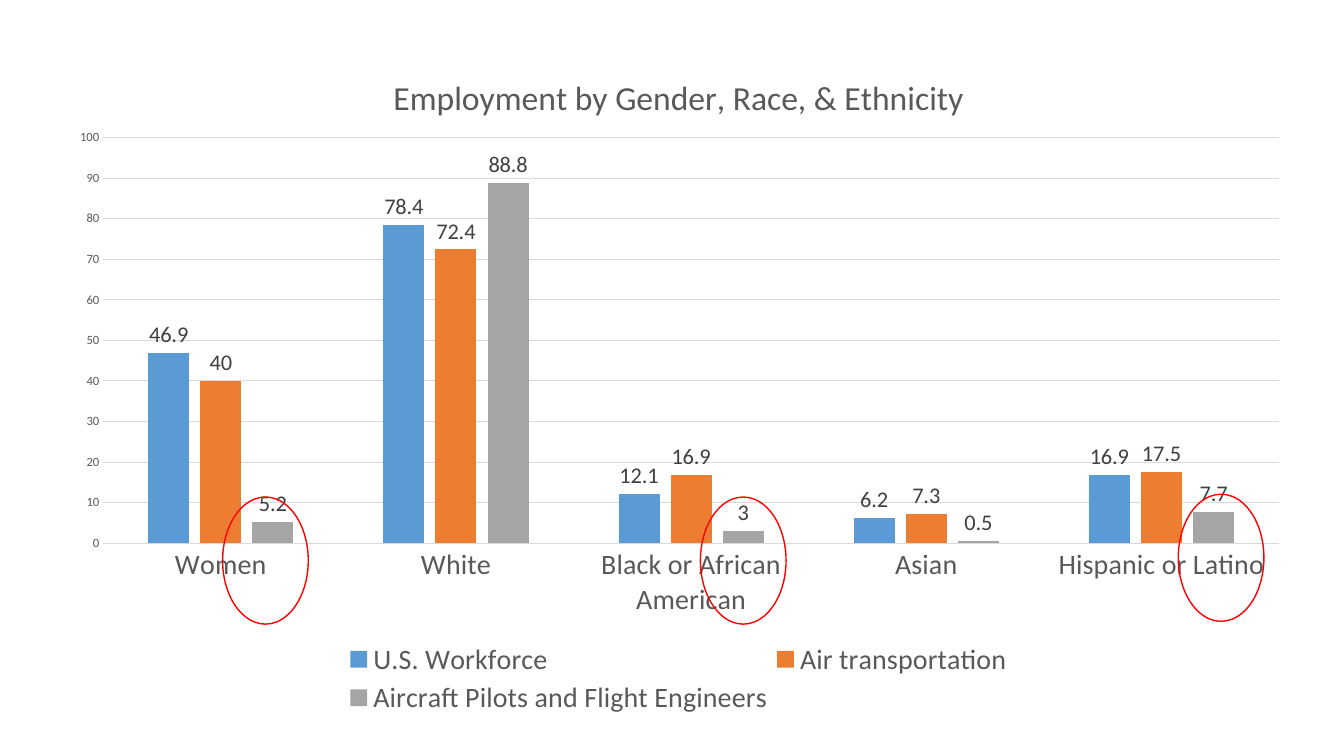
from dataclasses import dataclass

from pptx import Presentation
from pptx.chart.data import CategoryChartData
from pptx.dml.color import RGBColor
from pptx.enum.chart import XL_CHART_TYPE, XL_LABEL_POSITION, XL_LEGEND_POSITION, XL_TICK_MARK
from pptx.enum.shapes import MSO_SHAPE
from pptx.oxml import parse_xml
from pptx.oxml.ns import nsdecls, qn
from pptx.util import Pt

CLUSTERED = XL_CHART_TYPE.COLUMN_CLUSTERED
OUTSIDE_END = XL_LABEL_POSITION.OUTSIDE_END
BOTTOM = XL_LEGEND_POSITION.BOTTOM
NO_TICK = XL_TICK_MARK.NONE
OVAL = MSO_SHAPE.OVAL
BLANK_LAYOUT = 6

CATEGORIES = ["Women", "White", "Black or African American", "Asian", "Hispanic or Latino"]
SERIES = {
    "U.S. Workforce": [46.9, 78.4, 12.1, 6.2, 16.9],
    "Air transportation": [40, 72.4, 16.9, 7.3, 17.5],
    "Aircraft Pilots and Flight Engineers": [5.2, 88.8, 3, 0.5, 7.7],
}


@dataclass(frozen=True)
class Theme:
    font: str = "Calibri"
    text: str = "595959"
    label: str = "404040"
    grid: str = "D9D9D9"
    highlight: str = "FF0000"
    series: tuple = ("5B9BD5", "ED7D31", "A5A5A5")
    title_size: int = 24
    category_size: int = 20
    label_size: int = 16
    value_size: int = 9


class SlideBuilder:
    def __init__(self, slide, theme):
        self.slide = slide
        self.theme = theme

    def style_font(self, font, size, color):
        font.name = self.theme.font
        font.size = Pt(size)
        font.bold = False
        font.color.rgb = RGBColor.from_string(color)

    def style_line(self, line, color, width):
        line.color.rgb = RGBColor.from_string(color)
        line.width = Pt(width)

    def place(self, parent, index, target="", **fractions):
        """Fix a chart part's layout, in fractions of the chart's size."""
        for old in parent.findall(qn("c:layout")):
            parent.remove(old)
        inner = f'<c:layoutTarget val="{target}"/>' if target else ""
        modes = "".join(f'<c:{key}Mode val="edge"/>' for key in "xy")
        values = "".join(f'<c:{key} val="{value}"/>' for key, value in fractions.items())
        parent.insert(index, parse_xml(
            f'<c:layout {nsdecls("c")}><c:manualLayout>{inner}{modes}{values}'
            "</c:manualLayout></c:layout>"))

    def column_chart(self, title, categories, series, left, top, width, height):
        theme = self.theme
        data = CategoryChartData()
        data.categories = categories
        for name, values in series.items():
            data.add_series(name, values)
        chart = self.slide.shapes.add_chart(
            CLUSTERED, Pt(left), Pt(top), Pt(width), Pt(height), data).chart
        chart.font.name = theme.font
        chart.font.size = Pt(10)

        chart.has_title = True
        p = chart.chart_title.text_frame.paragraphs[0]
        p.text = title
        self.style_font(p.font, theme.title_size, theme.text)
        chart.chart_title.include_in_layout = False

        chart.has_legend = True
        chart.legend.position = BOTTOM
        chart.legend.include_in_layout = False
        self.style_font(chart.legend.font, theme.category_size, theme.text)

        self.style_axes(chart)
        self.style_columns(chart.plots[0])

        plot_area = chart.element.find(".//" + qn("c:plotArea"))
        legend = chart.element.find(".//" + qn("c:legend"))
        self.place(plot_area, 0, "inner", x=0.04, y=0.13, w=0.94, h=0.6)
        self.place(legend, 1, x=0.23, y=0.87, w=0.54, h=0.12)

    def style_axes(self, chart):
        theme = self.theme
        category, value = chart.category_axis, chart.value_axis
        for axis, size in ((category, theme.category_size), (value, theme.value_size)):
            axis.major_tick_mark = axis.minor_tick_mark = NO_TICK
            self.style_font(axis.tick_labels.font, size, theme.text)
        self.style_line(category.format.line, theme.grid, 0.75)
        value.minimum_scale, value.maximum_scale, value.major_unit = 0, 100, 10
        value.format.line.fill.background()
        self.style_line(value.major_gridlines.format.line, theme.grid, 0.75)

    def style_columns(self, plot):
        plot.gap_width = 219
        plot.overlap = -27
        plot.vary_by_categories = False
        for series, color in zip(plot.series, self.theme.series):
            series.format.fill.solid()
            series.format.fill.fore_color.rgb = RGBColor.from_string(color)
            labels = series.data_labels
            labels.show_value = True
            labels.position = OUTSIDE_END
            self.style_font(labels.font, self.theme.label_size, self.theme.label)

    def ring(self, left, top, width, height):
        sp = self.slide.shapes.add_shape(OVAL, Pt(left), Pt(top), Pt(width), Pt(height))
        sp.shadow.inherit = False
        sp.fill.background()
        self.style_line(sp.line, self.theme.highlight, 1)


def main():
    prs = Presentation()
    prs.slide_width, prs.slide_height = Pt(960), Pt(540)
    s = prs.slides.add_slide(prs.slide_layouts[BLANK_LAYOUT])
    builder = SlideBuilder(s, Theme())
    builder.column_chart("Employment by Gender, Race, & Ethnicity", CATEGORIES, SERIES,
                         38, 35.5, 893.5, 483)
    for column, top in enumerate((355, 355, 353)):
        builder.ring(159 + column * 341.3, top, 61.2, 90.8)
    prs.save("out.pptx")


if __name__ == "__main__":
    main()
